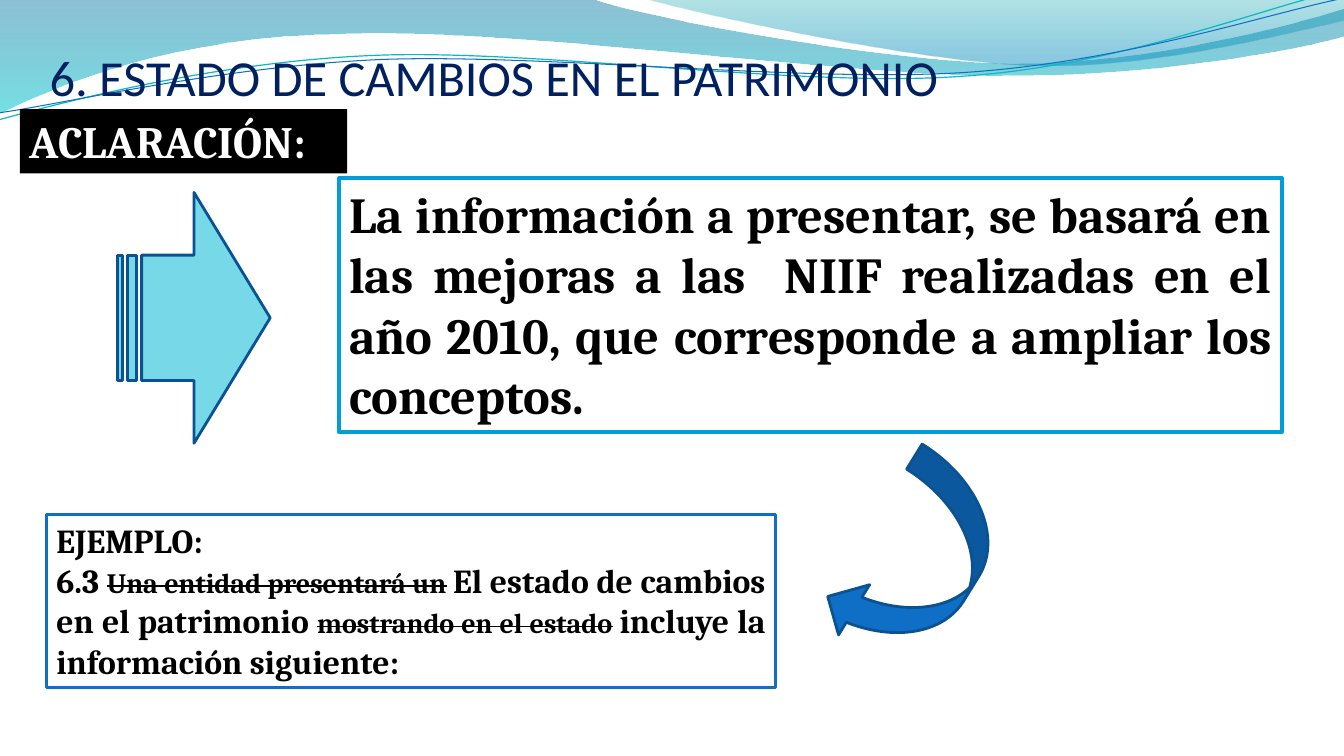
from lxml import etree
from pptx import Presentation
from pptx import util as u
from pptx.dml.color import RGBColor
from pptx.enum import shapes, text
from pptx.oxml.ns import qn

NAVY, BLUE, DARK_BLUE, CYAN = "002060", "0F6FC6", "0B5292", "009DD9"


def color(value):
    return RGBColor.from_string(value)


def add_text(paragraph, content, size, font="Cambria", ink="000000", bold=True, strike=False):
    run = paragraph.add_run()
    run.text = content
    run.font.size = u.Pt(size)
    run.font.name = font
    run.font.bold = bold
    run.font.color.rgb = color(ink)
    if strike:
        run._r.get_or_add_rPr().set("strike", "sngStrike")


class SlideBuilder:
    def __init__(self, slide):
        self.slide = slide

    def style(self, shape, fill=None, line=None, width=0):
        shape.shadow.inherit = False
        if fill:
            shape.fill.solid()
            shape.fill.fore_color.rgb = color(fill)
        else:
            shape.fill.background()
        if line:
            shape.line.color.rgb = color(line)
            shape.line.width = u.Pt(width)
        else:
            shape.line.fill.background()
        return shape

    def outline(self, start, segments, close):
        """Draw lines (one point) and cubic curves (three points)."""
        points = [(u.Cm(x), u.Cm(y)) for segment in segments
                  for x, y in zip(segment[::2], segment[1::2])]
        builder = self.slide.shapes.build_freeform(*map(u.Cm, start))
        builder.add_line_segments(points, close=close)
        shape = builder.convert_to_shape()
        steps = iter(list(shape._element.iter(qn("a:lnTo"))))
        for segment in segments:
            step = next(steps)
            if len(segment) == 6:
                step.addprevious(cubic := etree.Element(qn("a:cubicBezTo")))
                for part in (step, next(steps), next(steps)):
                    cubic.append(part[0])
                    part.getparent().remove(part)
        return shape

    def wave(self, start, segments, stops):
        shape = self.style(self.outline(start, segments, True))
        shape.fill.gradient()
        shape.fill.gradient_angle = 270
        for stop, (position, value, alpha) in zip(shape.fill.gradient_stops, stops):
            stop.position = position
            stop.color.rgb = color(value)
            rgb = stop._gs.find(qn("a:srgbClr"))
            etree.SubElement(rgb, qn("a:alpha")).set("val", str(alpha * 1000))

    def curve(self, start, segments, line, width):
        self.style(self.outline(start, segments, False), None, line, width)

    def shape(self, kind, box, fill=None, line=None, width=0, rotation=0):
        shape = self.slide.shapes.add_shape(kind, *map(u.Cm, box))
        shape.rotation = rotation
        return self.style(shape, fill, line, width)

    def fill_frame(self, shape, paragraphs, align):
        frame = shape.text_frame
        frame.word_wrap = True
        frame.vertical_anchor = text.MSO_ANCHOR.TOP
        for index, runs in enumerate(paragraphs):
            paragraph = frame.add_paragraph() if index else frame.paragraphs[0]
            paragraph.alignment = align
            for content, options in runs:
                add_text(paragraph, content, **options)

    def text_box(self, box, paragraphs, align=text.PP_ALIGN.LEFT):
        self.fill_frame(self.slide.shapes.add_textbox(*map(u.Cm, box)), paragraphs, align)

    def panel(self, box, paragraphs, align=text.PP_ALIGN.JUSTIFY, **look):
        shape = self.shape(shapes.MSO_SHAPE.RECTANGLE, box, **look)
        self.fill_frame(shape, paragraphs, align)


def main():
    presentation = Presentation()
    presentation.slide_width, presentation.slide_height = u.Cm(33.87), u.Cm(19.05)
    builder = SlideBuilder(presentation.slides.add_slide(presentation.slide_layouts[6]))

    # Header waves
    builder.wave((0, 0), [
        (14.91, -0.03),
        (16.1, 0.43, 22.48, 1.6, 25.68, 1.6),
        (28.91, 1.6, 32.46, 0.66, 33.86, 0.23),
        (33.91, 0.91),
        (33.3, 1.12, 29.46, 1.93, 25.25, 1.91),
        (21.06, 1.91, 12.93, 0.71, 8.71, 0.86),
        (4.37, 0.91, 1.55, 2.11, -0.03, 2.87),
    ], [(0, "0074A1", 45), (1, "00C6CF", 55)])
    builder.wave((16.23, -0.03), [
        (17.25, 0.28, 23.09, 1.57, 26.04, 1.65),
        (28.98, 1.75, 32.56, 0.81, 33.86, 0.53),
        (33.86, 0),
    ], [(0, "00A1A9", 30), (0.8, "008BBF", 45)])
    builder.curve((-0.03, 3.02), [
        (1.63, 2.57, 5.36, 1.57, 9.37, 1.4),
        (13.39, 1.22, 20.07, 2.21, 24.13, 1.93),
        (28.19, 1.68, 31.8, 0.2, 33.81, -0.25),
    ], "0AB8BF", 0.85)
    builder.curve((0, 2.84), [
        (1.6, 2.62, 5.54, 1.68, 9.6, 1.5),
        (13.64, 1.35, 20.22, 2.08, 24.26, 1.83),
        (28.32, 1.57, 31.88, 0.36, 33.88, -0.05),
    ], BLUE, 0.75)

    # Arrow towards the clarification
    builder.shape(shapes.MSO_SHAPE.STRIPED_RIGHT_ARROW, (2.97, 4.85, 3.84, 6.32),
                  "77D9E8", DARK_BLUE, 2)

    # Title and label
    builder.text_box((1, 1.04, 30.23, 1.8), [[
        ("6. ESTADO DE CAMBIOS EN EL PATRIMONIO",
         dict(size=36, font="Calibri", ink=NAVY, bold=False))]])
    builder.panel((0.5, 2.75, 8.25, 1.62),
                  [[("ACLARACIÓN:", dict(size=32, ink="FFFFFF"))]],
                  text.PP_ALIGN.LEFT, fill="000000")

    # Clarification
    builder.panel((8.55, 4.49, 23.75, 6.4), [[
        ("La información a presentar, se basará en las mejoras a las  NIIF realizadas "
         "en el año 2010, que corresponde a ampliar los conceptos.", dict(size=36))]],
        fill="FFFFFF", line=CYAN, width=3)

    # Example with the replaced wording struck out
    current, small, replaced = dict(size=24), dict(size=20), dict(size=20, strike=True)
    builder.panel((1.17, 12.97, 18.37, 4.36), [
        [("EJEMPLO:", current)],
        [("6.3 ", current),
         ("Una entidad presentará un", replaced),
         (" ", small),
         ("El estado de cambios en el patrimonio ", current),
         ("mostrando en el estado", replaced),
         (" ", small),
         ("incluye la información siguiente:", current)],
    ], fill="FFFFFF", line=BLUE, width=2.25)

    # Curved arrow towards the example
    builder.shape(shapes.MSO_SHAPE.CURVED_LEFT_ARROW, (21.63, 11.58, 2.97, 5.26),
                  BLUE, DARK_BLUE, 2, rotation=31.8)

    presentation.save("out.pptx")


if __name__ == "__main__":
    main()
